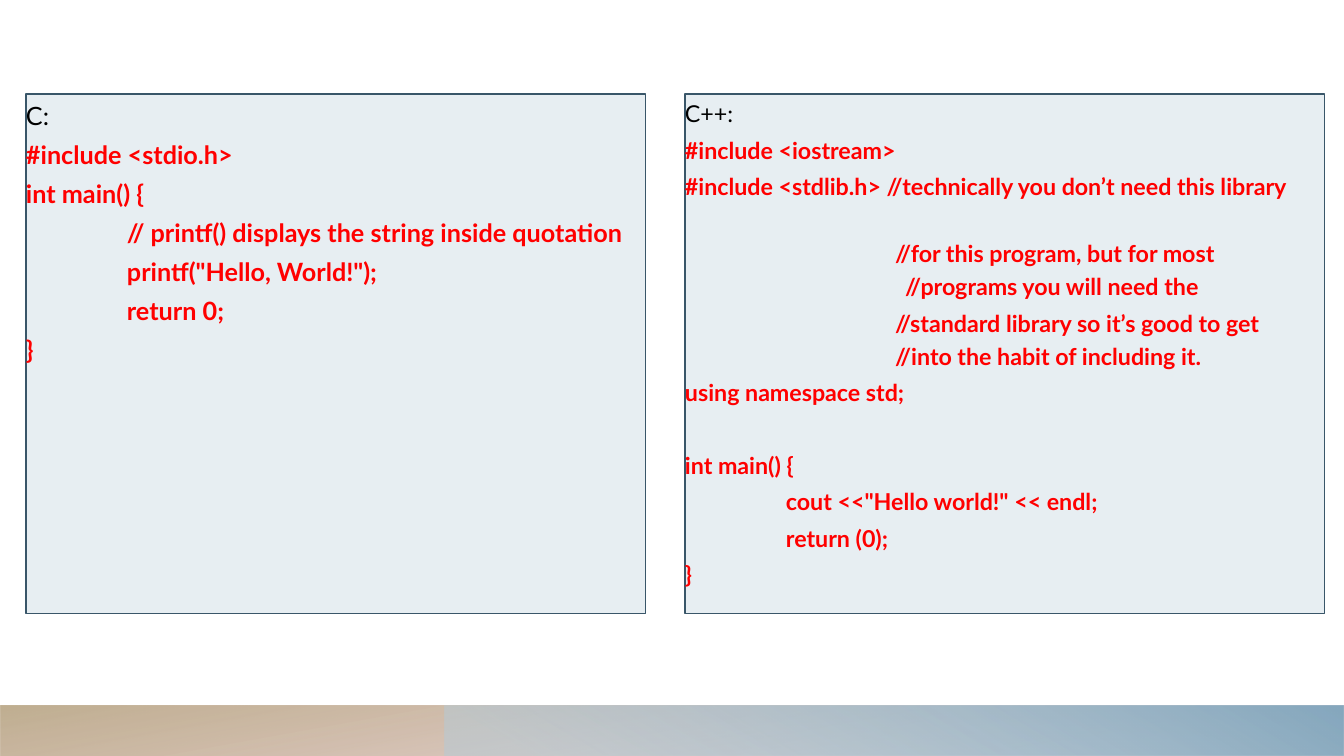
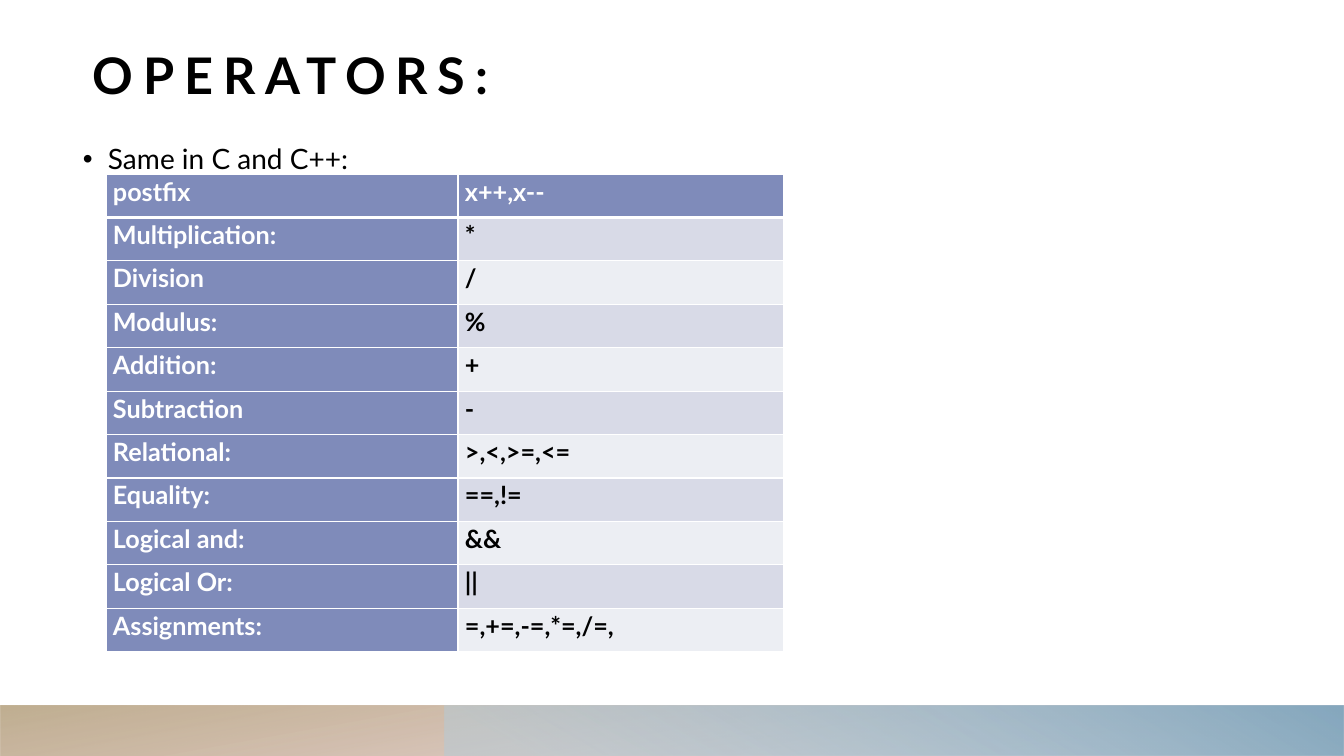
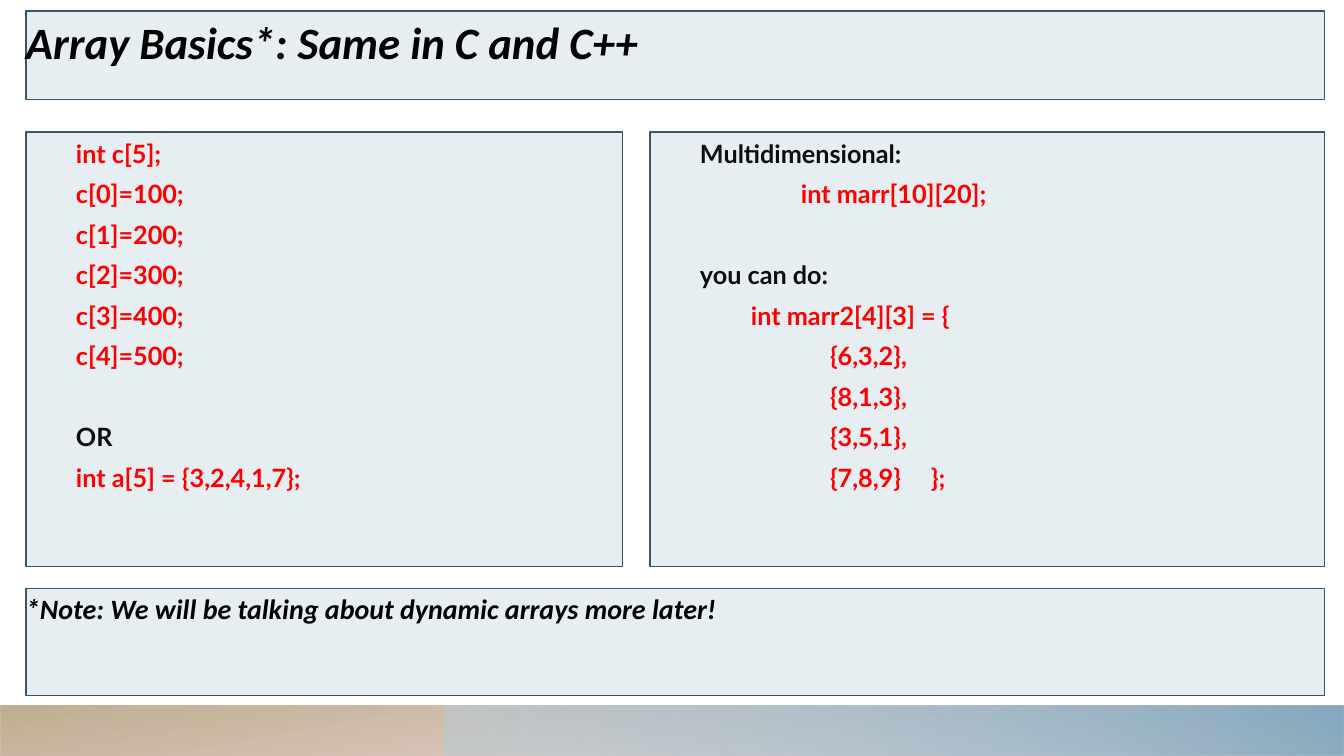
from lxml import etree
from pptx import Presentation
from pptx.dml.color import RGBColor
from pptx.enum.shapes import MSO_SHAPE as SHAPE
from pptx.enum.text import MSO_ANCHOR as ANCHOR, MSO_AUTO_SIZE as AUTO, PP_ALIGN as ALIGN
from pptx.oxml.ns import qn
from pptx.util import Pt

# Shared look
EMU_PER_PX = 914400 / 100.8
WIDTH, HEIGHT = 1344, 756
BAND_TOP = 706
FONT = "Lato"
BLACK, INK, WHITE, RED = "000000", "0D0D0D", "FFFFFF", "FF0000"
PANEL, OUTLINE = "E7EEF2", "395669"
HEAD, ROWS = "7F8BBA", ("D8DAE7", "ECEEF3")
TAB = 101
CODE = dict(color=RED, bold=True, before=2)
ARRAY = dict(CODE, before=3, indent=50)
REMARK = dict(font="Calibri", bold=True, italic=True, lines=1.07, after=8)


def px(n):
    return round(n * EMU_PER_PX)


def rgb(value):
    return RGBColor.from_string(value)


def child(parent, tag, **attrs):
    return etree.SubElement(parent, qn(tag), {k: str(v) for k, v in attrs.items()})


# Text
def write(p, text, font=FONT, size=18, color=BLACK, bold=False, italic=False,
          spacing=0, lines=1.2, before=0, after=0, indent=0, hang=0, tab=None):
    p.alignment = ALIGN.LEFT
    p.line_spacing = lines
    p.space_before, p.space_after = Pt(before), Pt(after)
    pPr = p._p.get_or_add_pPr()
    pPr.set("marL", str(px(indent)))
    pPr.set("indent", str(-px(hang)))
    if not hang:
        child(pPr, "a:buNone")
    if tab:
        child(child(pPr, "a:tabLst"), "a:tab", pos=px(tab), algn="l")
    r = p.add_run()
    r.text = text
    f = r.font
    f.name, f.size, f.bold, f.italic = font, Pt(size), bold, italic
    f.color.rgb = rgb(color)
    if spacing:
        r._r.get_or_add_rPr().set("spc", str(spacing * 100))


def fill_text(sp, paragraphs, anchor=ANCHOR.TOP):
    tf = sp.text_frame
    tf.word_wrap = True
    tf.auto_size = AUTO.NONE
    tf.vertical_anchor = anchor
    tf.margin_left = tf.margin_top = tf.margin_right = tf.margin_bottom = 0
    for i, (text, style) in enumerate(paragraphs):
        write(tf.add_paragraph() if i else tf.paragraphs[0], text, **style)


# Shapes
def place(sp, x, y, w, h):
    sp.left, sp.top, sp.width, sp.height = px(x), px(y), px(w), px(h)
    return sp


def add_rect(s, x, y, w, h):
    sp = s.shapes.add_shape(SHAPE.RECTANGLE, px(x), px(y), px(w), px(h))
    sp.shadow.inherit = False
    return sp


def panel(sp, paragraphs):
    sp.fill.solid()
    sp.fill.fore_color.rgb = rgb(PANEL)
    sp.line.color.rgb = rgb(OUTLINE)
    sp.line.width = Pt(0.75)
    fill_text(sp, paragraphs)


def add_band(s, x, stops, angle, rotation=0):
    sp = add_rect(s, x, BAND_TOP, WIDTH - x, HEIGHT - BAND_TOP)
    sp.rotation = rotation
    sp.line.fill.background()
    sp.fill.background()
    spPr = sp.element.spPr
    spPr.find(qn("a:xfrm")).set("flipH", "1")
    grad = etree.Element(qn("a:gradFill"), rotWithShape="1")
    gsLst = child(grad, "a:gsLst")
    for pos, color, alpha in stops:
        gs = child(gsLst, "a:gs", pos=pos * 1000)
        child(child(gs, "a:srgbClr", val=color), "a:alpha", val=alpha * 1000)
    child(grad, "a:lin", ang=angle * 60000, scaled=0)
    spPr.replace(spPr.find(qn("a:noFill")), grad)
    return sp


def add_master_bands(prs, s):
    bands = [
        add_band(s, 0, [(14, "BA8B7F", 28), (100, "B5A17E", 85)], 100, rotation=180),
        add_band(s, 445, [(9, "B6CBD8", 55), (99, "86A8BE", 100)], 240),
    ]
    for shape_id, sp in enumerate(bands, 100):
        sp.element.nvSpPr.cNvPr.set("id", str(shape_id))
        prs.slide_master.shapes.element.append(sp.element)


# Table
def format_cell(cell, text, fill, color, bottom):
    tcPr = cell._tc.get_or_add_tcPr()
    for side, width in (("L", 1), ("R", 1), ("T", 1), ("B", bottom)):
        ln = child(tcPr, "a:ln" + side, w=Pt(width))
        child(child(ln, "a:solidFill"), "a:srgbClr", val=WHITE)
    cell.fill.solid()
    cell.fill.fore_color.rgb = rgb(fill)
    cell.margin_left = cell.margin_right = px(7)
    cell.margin_top = cell.margin_bottom = 0
    write(cell.text_frame.paragraphs[0], text, color=color, bold=True, lines=1.07)


def add_grid(s, x, y, widths, height, rows):
    table = s.shapes.add_table(len(rows), len(widths), px(x), px(y),
                               px(sum(widths)), px(height)).table
    for column, width in zip(table.columns, widths):
        column.width = px(width)
    for i, row in enumerate(rows):
        table.rows[i].height = px(height) // len(rows)
        for j, text in enumerate(row):
            head = i == 0 or j == 0
            format_cell(table.cell(i, j), text,
                        fill=HEAD if head else ROWS[(i - 1) % 2],
                        color=WHITE if head else BLACK,
                        bottom=1 if i else 3)


# Slides
def new_slide(prs, titled=False):
    s = prs.slides.add_slide(prs.slide_layouts[1])
    title, body = s.placeholders
    if not titled:
        title.element.getparent().remove(title.element)
    return s, title, body


def hello_slide(prs):
    s, _, body = new_slide(prs)
    add_master_bands(prs, s)
    top, height = 94, 520
    inner = dict(CODE, indent=TAB)
    panel(place(body, 26, top, 620, height), [
        ("C:", dict(before=10)),
        ("#include <stdio.h>", CODE),
        ("int main() {", CODE),
        ("// printf() displays the string inside quotation", inner),
        ('printf("Hello, World!");', inner),
        ("return 0;", inner),
        ("}", CODE),
    ])

    code = dict(CODE, size=16.6)
    inner = dict(code, indent=TAB)
    column = 210
    note = dict(code, indent=column)
    panel(add_rect(s, 685, top, 640, height), [
        ("C++:", dict(size=16.6, before=10)),
        ("#include <iostream>", code),
        ("#include <stdlib.h>\t//technically you don’t need this library",
         dict(code, tab=column)),
        ("//for this program, but for most", dict(note, before=24)),
        ("//programs you will need the", dict(note, indent=column + 10, before=0)),
        ("//standard library so it’s good to get", note),
        ("//into the habit of including it.", dict(note, before=0)),
        ("using namespace std;", code),
        ("int main() {", dict(code, before=28)),
        ('cout <<"Hello world!" << endl;', inner),
        ("return (0);", inner),
        ("}", code),
    ])


def operators_slide(prs):
    s, title, body = new_slide(prs, titled=True)
    fill_text(place(title, 93, 41, 1129, 64),
              [("OPERATORS:", dict(size=36, bold=True, spacing=7, lines=1.0))],
              anchor=ANCHOR.BOTTOM)
    fill_text(place(body, 83, 135, 1198, 534),
              [("Same in C and C++:", dict(size=20, before=10, indent=25, hang=25))])
    add_grid(s, 106, 174, (352, 326), 478, [
        ("postfix", "x++,x--"),
        ("Multiplication:", "*"),
        ("Division", "/"),
        ("Modulus:", "%"),
        ("Addition:", "+"),
        ("Subtraction", "-"),
        ("Relational:", ">,<,>=,<="),
        ("Equality:", "==,!="),
        ("Logical and:", "&&"),
        ("Logical Or:", "||"),
        ("Assignments:", "=,+=,-=,*=,/=,"),
    ])


def arrays_slide(prs):
    s, _, body = new_slide(prs)
    left, width = 26, 1299
    top, height = 132, 435
    label = dict(ARRAY, color=INK)
    after_gap = dict(label, before=32)
    values = dict(ARRAY, indent=180)

    panel(add_rect(s, left, 11, width, 89),
          [("Array Basics*: Same in C and C++", dict(REMARK, size=32))])
    panel(place(body, left, top, 597, height), [
        ("int c[5];", ARRAY),
        *((f"c[{i}]={(i + 1) * 100};", ARRAY) for i in range(5)),
        ("OR", after_gap),
        ("int a[5] = {3,2,4,1,7};", ARRAY),
    ])
    panel(add_rect(s, 650, top, 675, height), [
        ("Multidimensional:", label),
        ("int marr[10][20];", dict(ARRAY, indent=151)),
        ("you can do:", after_gap),
        ("int marr2[4][3] = {", dict(ARRAY, indent=TAB)),
        ("{6,3,2},", values),
        ("{8,1,3},", values),
        ("{3,5,1},", values),
        ("{7,8,9}\t};", values),
    ])
    panel(add_rect(s, left, 589, width, 107),
          [("*Note: We will be talking about dynamic arrays more later!",
            dict(REMARK, size=20))])


def main():
    prs = Presentation()
    prs.slide_width, prs.slide_height = px(WIDTH), px(HEIGHT)
    hello_slide(prs)
    operators_slide(prs)
    arrays_slide(prs)
    prs.save("out.pptx")


if __name__ == "__main__":
    main()
